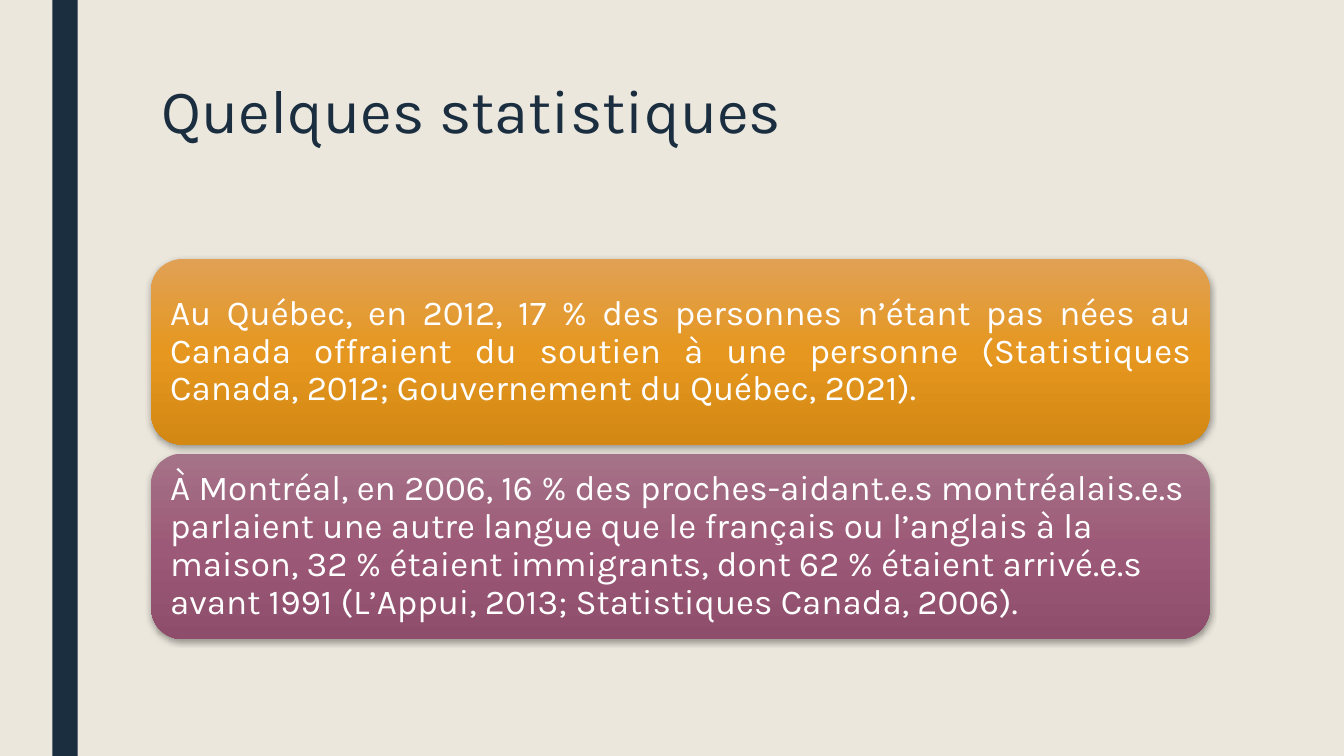
from lxml.etree import SubElement
from pptx import Presentation
from pptx.dml.color import RGBColor
from pptx.enum.shapes import MSO_SHAPE
from pptx.enum.text import MSO_ANCHOR, MSO_AUTO_SIZE, PP_ALIGN
from pptx.oxml.ns import qn
from pptx.util import Inches, Pt

NAVY, CREAM, WHITE = "1A2E40", "EBE7DD", "FFFFFF"
FONT = "Karla"
CONTENT_LEFT, CONTENT_WIDTH = 1.5, 10.5
CARD_TOP, CARD_HEIGHT, CARD_GAP = 2.57, 1.84, 0.09

STATISTICS = [
    ("Au Québec, en 2012, 17 % des personnes n’étant pas nées au Canada "
     "offraient du soutien à une personne (Statistiques Canada, 2012; "
     "Gouvernement du Québec, 2021).",
     ("E1A155", "E5971F", "D38814"), PP_ALIGN.JUSTIFY),
    ("À Montréal, en 2006, 16 % des proches-aidant.e.s montréalais.e.s "
     "parlaient une autre langue que le français ou l’anglais à la maison, "
     "32 % étaient immigrants, dont 62 % étaient arrivé.e.s avant 1991 "
     "(L’Appui, 2013; Statistiques Canada, 2006).",
     ("A57388", "9D5A78", "8E4D6A"), PP_ALIGN.LEFT),
]


def rgb(hex_color):
    return RGBColor.from_string(hex_color)


def set_all(target, values):
    for name, value in values.items():
        setattr(target, name, value)


def write_text(shape, text, size, color, frame_format, paragraph_format):
    frame = shape.text_frame
    frame.text = text
    set_all(frame, {"word_wrap": True, "auto_size": MSO_AUTO_SIZE.NONE, **frame_format})
    paragraph = frame.paragraphs[0]
    set_all(paragraph, paragraph_format)
    font = paragraph.runs[0].font
    set_all(font, {"name": FONT, "size": Pt(size)})
    font.color.rgb = rgb(color)


def fill_gradient(shape, colors):
    """Spread the colours evenly from top to bottom."""
    shape.fill.gradient()
    shape.fill.gradient_angle = 270
    stops = shape._element.spPr.find(qn("a:gradFill")).find(qn("a:gsLst"))
    for stop in list(stops):
        stops.remove(stop)
    for index, color in enumerate(colors):
        position = 100000 * index // (len(colors) - 1)
        stop = SubElement(stops, qn("a:gs"), pos=str(position))
        SubElement(stop, qn("a:srgbClr"), val=color)


def add_soft_shadow(shape):
    shape.shadow.inherit = False
    effects = shape._element.spPr.find(qn("a:effectLst"))
    shadow = SubElement(effects, qn("a:outerShdw"), blurRad=str(Pt(4.5)),
                        dist=str(Pt(1.5)), dir="5400000", algn="ctr", rotWithShape="0")
    shade = SubElement(shadow, qn("a:srgbClr"), val="000000")
    SubElement(shade, qn("a:alpha"), val="35000")


def add_side_bar(slide):
    bar = slide.shapes.add_shape(MSO_SHAPE.RECTANGLE, Inches(0.52), 0,
                                 Inches(0.25), Inches(7.5))
    bar.shadow.inherit = False
    bar.fill.solid()
    bar.fill.fore_color.rgb = rgb(NAVY)
    bar.line.fill.background()


def set_title(slide, text):
    title = slide.shapes.title
    set_all(title, {"left": Inches(CONTENT_LEFT), "top": Inches(0.75),
                    "width": Inches(CONTENT_WIDTH), "height": Inches(1.62)})
    write_text(title, text, 44, NAVY, {"vertical_anchor": MSO_ANCHOR.TOP},
               {"alignment": PP_ALIGN.LEFT, "line_spacing": 0.89})


def add_statistic_card(slide, top, text, colors, alignment):
    card = slide.shapes.add_shape(
        MSO_SHAPE.ROUNDED_RECTANGLE, Inches(CONTENT_LEFT), Inches(top),
        Inches(CONTENT_WIDTH), Inches(CARD_HEIGHT))
    card.line.fill.background()
    fill_gradient(card, colors)
    add_soft_shadow(card)
    # The rounded corners already inset the text by about 0.09 inch.
    margins = {f"margin_{side}": Inches(0.1) for side in ("left", "right", "top", "bottom")}
    write_text(card, text, 25, WHITE, {"vertical_anchor": MSO_ANCHOR.MIDDLE, **margins},
               {"alignment": alignment, "line_spacing": 0.9})


def main():
    presentation = Presentation()
    set_all(presentation, {"slide_width": Inches(13.33), "slide_height": Inches(7.5)})
    slide = presentation.slides.add_slide(presentation.slide_layouts[5])
    slide.background.fill.solid()
    slide.background.fill.fore_color.rgb = rgb(CREAM)

    add_side_bar(slide)
    set_title(slide, "Quelques statistiques")
    for row, (text, colors, alignment) in enumerate(STATISTICS):
        top = CARD_TOP + row * (CARD_HEIGHT + CARD_GAP)
        add_statistic_card(slide, top, text, colors, alignment)

    presentation.save("out.pptx")


if __name__ == "__main__":
    main()
